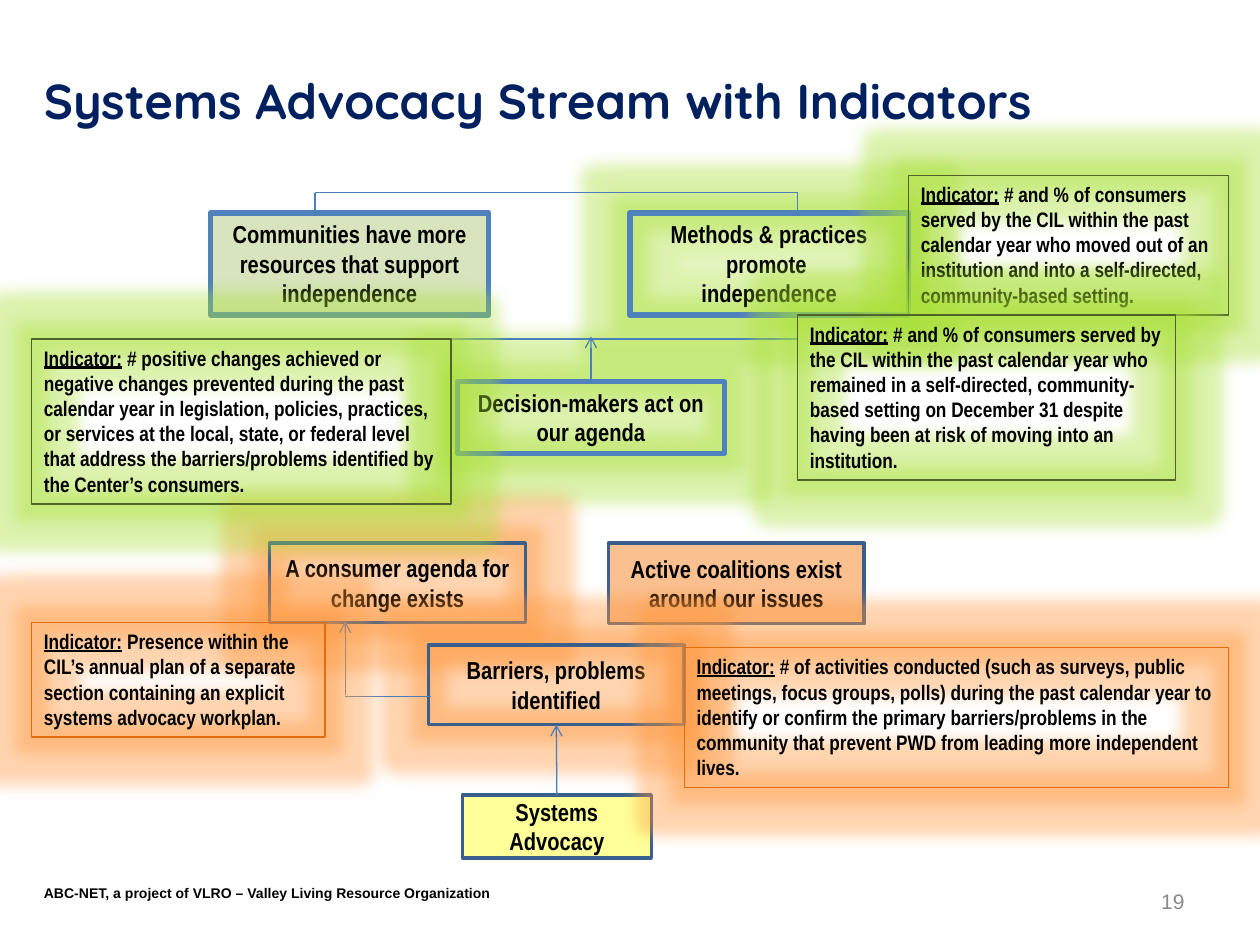
from lxml import etree
from pptx import Presentation
from pptx import util as u
from pptx.dml import color
from pptx.enum import shapes, text
from pptx.oxml import ns

NARROW = "Arial Narrow"
BLUE, NAVY, GREEN, ORANGE = "4F81BD", "3A5F8C", "4F6228", "E46C0A"
GREEN_GLOW, ORANGE_GLOW = "A8E034", "FF963B"
MIDDLE, TOP = text.MSO_ANCHOR.MIDDLE, text.MSO_ANCHOR.TOP
LEFT, CENTER, RIGHT = text.PP_ALIGN.LEFT, text.PP_ALIGN.CENTER, text.PP_ALIGN.RIGHT


def rgb(value):
    return color.RGBColor.from_string(value)


def child(parent, tag, **attributes):
    return etree.SubElement(parent, ns.qn(tag), attributes)


def write(frame, *paragraphs, font=NARROW, size=14, ink="000000", bold=True,
          align=LEFT, anchor=TOP, lead=""):
    frame.word_wrap = True
    frame.vertical_anchor = anchor
    for index, content in enumerate(paragraphs):
        paragraph = frame.add_paragraph() if index else frame.paragraphs[0]
        paragraph.alignment = align
        for part, underline in ((lead, True), (content, False)):
            if part:
                run = paragraph.add_run()
                run.text = part
                run.font.name = font
                run.font.size = u.Pt(size)
                run.font.bold = bold
                run.font.underline = underline
                run.font.color.rgb = rgb(ink)


class AdvocacySlide:
    def __init__(self, deck):
        self.slide = deck.slides.add_slide(deck.slide_layouts[6])
        self.link_color = "4B7EBC"
        self.link_width = 0.75

    def label(self, content, place, **style):
        box = self.slide.shapes.add_textbox(*map(u.Inches, place))
        write(box.text_frame, content, **style)

    def box(self, place, *paragraphs, line, width, fill=None, glow=None, **style):
        box = self.slide.shapes.add_shape(
            shapes.MSO_SHAPE.RECTANGLE, *map(u.Inches, place))
        box.shadow.inherit = False
        if fill:
            box.fill.solid()
            box.fill.fore_color.rgb = rgb(fill)
        else:
            box.fill.background()
        box.line.color.rgb = rgb(line)
        box.line.width = u.Pt(width)
        if glow:
            effects = box._element.spPr.find(ns.qn("a:effectLst"))
            halo = child(effects, "a:glow", rad=str(u.Pt(18)))
            tint = child(halo, "a:srgbClr", val=glow)
            child(tint, "a:alpha", val="40000")
        write(box.text_frame, *paragraphs, **style)
        return box

    def step(self, place, *paragraphs, line=NAVY, width=2, anchor=MIDDLE, **style):
        return self.box(place, *paragraphs, line=line, width=width,
                        anchor=anchor, align=CENTER, **style)

    def outcome(self, place, *paragraphs, **style):
        return self.step(place, *paragraphs, line=BLUE, width=3, anchor=TOP, **style)

    def indicator(self, place, content, line=GREEN, glow=GREEN_GLOW):
        return self.box(place, " " + content, lead="Indicator:", size=12,
                        line=line, width=0.75, glow=glow)

    def link(self, start, end, arrow=False, source=None, target=None):
        link = self.slide.shapes.add_connector(
            shapes.MSO_CONNECTOR.STRAIGHT, *map(u.Inches, start + end))
        if source:
            link.begin_connect(source, 0)
        if target:
            link.end_connect(target, 2)
        link.line.color.rgb = rgb(self.link_color)
        link.line.width = u.Pt(self.link_width)
        if arrow:
            child(link.line._get_or_add_ln(), "a:tailEnd", type="arrow")
        child(link._element.spPr, "a:effectLst")


def main():
    deck = Presentation()
    deck.slide_width, deck.slide_height = u.Inches(10), u.Inches(7.5)
    page = AdvocacySlide(deck)

    page.label("ABC-NET, a project of VLRO – Valley Living Resource Organization",
               (0.25, 6.97, 5, 0.23), font="Arial", size=8)
    page.label("Systems Advocacy Stream with Indicators", (0.25, 0.17, 9, 1.25),
               font="Quicksand", size=28, ink="002060", anchor=MIDDLE)
    page.label("19", (7.17, 6.95, 2.33, 0.4), font="Arial", size=12, ink="898989",
               bold=False, align=RIGHT, anchor=MIDDLE)

    advocacy = page.step((3.67, 6.31, 1.5, 0.5), "Systems Advocacy", fill="FFFF99")
    page.outcome((1.67, 1.69, 2.21, 0.81),
                 "Communities have more resources that support independence",
                 fill="D7E4BD")
    page.outcome((5, 1.69, 2.21, 0.81), "Methods & practices promote ",
                 "independence", glow=GREEN_GLOW)
    decision = page.outcome((3.63, 3.03, 2.12, 0.57),
                            "Decision-makers act on our agenda", glow=GREEN_GLOW)
    page.step((2.14, 4.31, 2.03, 0.63), "A consumer agenda for change exists",
              glow=ORANGE_GLOW)
    page.step((4.83, 4.31, 2.03, 0.64), "Active coalitions exist around our issues",
              fill="FAC090")
    barriers = page.step((3.4, 5.12, 2.03, 0.63), "Barriers, problems identified",
                         glow=ORANGE_GLOW)

    left, right, bracket = 2.5, 6.33, 1.53
    page.link((left, bracket), (right, bracket))
    for x in (right, left):
        page.link((x, bracket), (x, 1.71))
    page.link((left, 2.69), (right, 2.69))
    page.link((4.42, 6.31), (4.42, 5.75), arrow=True, source=advocacy, target=barriers)
    page.link((2.74, 5.53), (3.42, 5.53))
    page.link((2.74, 5.52), (2.74, 4.93), arrow=True)

    page.indicator((5.43, 5.14, 4.32, 1.11),
                   "# of activities conducted (such as surveys, public meetings, focus "
                   "groups, polls) during the past calendar year to identify or confirm "
                   "the primary barriers/problems in the community that prevent PWD from "
                   "leading more independent lives.", ORANGE, ORANGE_GLOW)
    page.indicator((0.25, 4.94, 2.33, 0.91),
                   "Presence within the CIL’s annual plan of a separate section "
                   "containing an explicit systems advocacy workplan.",
                   ORANGE, ORANGE_GLOW)
    page.indicator((0.25, 2.69, 3.33, 1.31),
                   "# positive changes achieved or negative changes prevented during the "
                   "past calendar year in legislation, policies, practices, or services "
                   "at the local, state, or federal level that address the "
                   "barriers/problems identified by the Center’s consumers.")
    page.link((4.69, 3.03), (4.69, 2.67), arrow=True, source=decision)
    page.indicator((7.21, 1.39, 2.54, 1.11),
                   "# and % of consumers served by the CIL within the past calendar year "
                   "who moved out of an institution and into a self-directed, "
                   "community-based setting.")
    page.indicator((6.33, 2.5, 3, 1.31),
                   "# and % of consumers served by the CIL within the past calendar year "
                   "who remained in a self-directed, community-based setting on December "
                   "31 despite having been at risk of moving into an institution.")

    deck.save("out.pptx")


if __name__ == "__main__":
    main()
